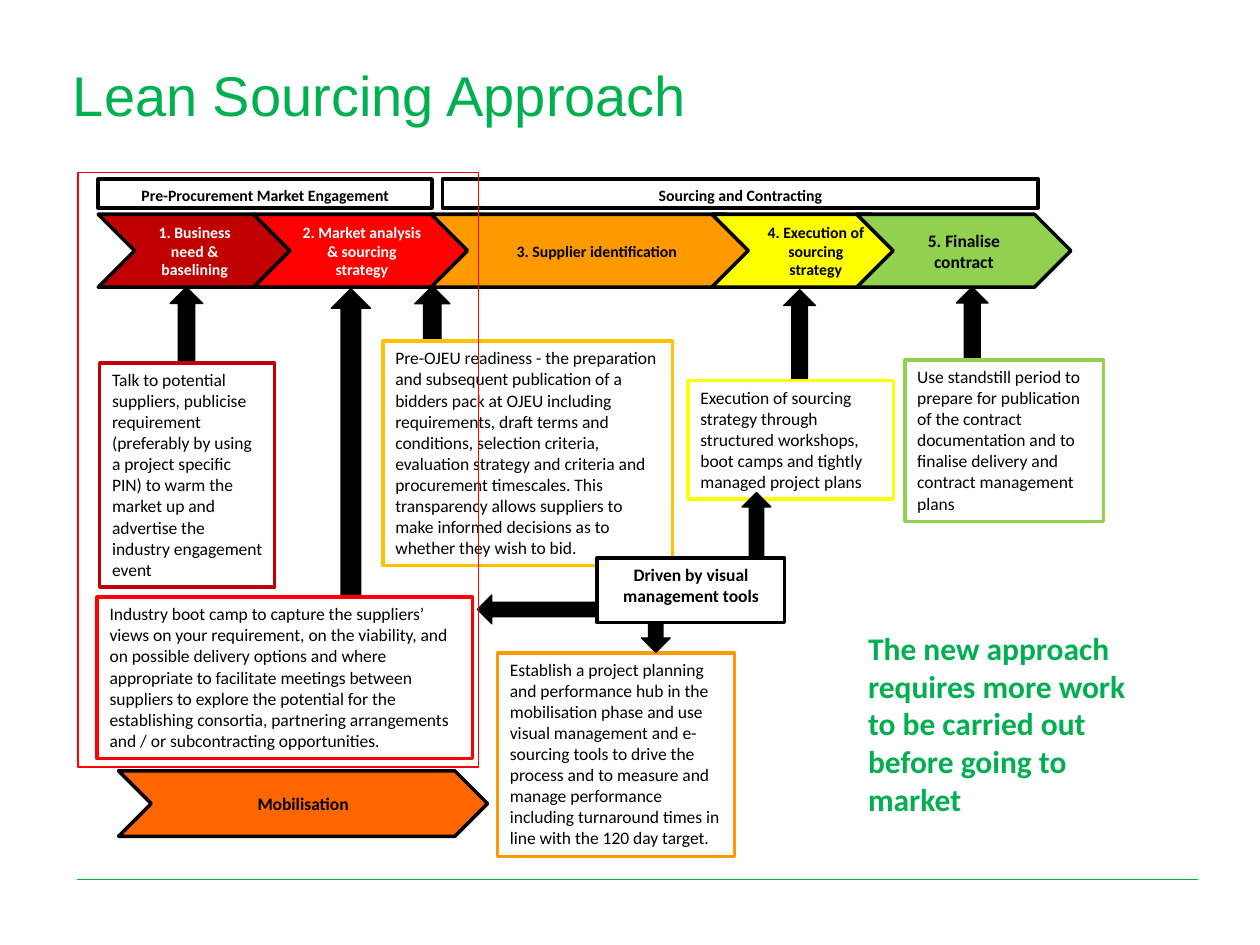
from dataclasses import dataclass

from lxml.etree import SubElement
from pptx import Presentation
from pptx.dml.color import RGBColor
from pptx.enum.shapes import MSO_CONNECTOR, MSO_SHAPE as Preset
from pptx.enum.text import MSO_ANCHOR as Anchor, MSO_AUTO_SIZE as AutoSize, PP_ALIGN as Align
from pptx.oxml.ns import qn
from pptx.util import Cm, Pt


@dataclass(frozen=True)
class Theme:
    black: str = "000000"
    white: str = "FFFFFF"
    green: str = "00B050"
    rule: str = "00AF41"
    dark_red: str = "C00000"
    red: str = "FF0000"
    orange: str = "FF9900"
    deep_orange: str = "FF6600"
    gold: str = "FFC000"
    yellow: str = "FFFF00"
    lime: str = "92D050"
    body_font: str = "Calibri"
    title_font: str = "Arial"
    title: int = 32
    message: int = 18
    body: int = 10
    label: int = 9


theme = Theme()
prs = Presentation()
prs.slide_width, prs.slide_height = Cm(25.4), Cm(19.05)
slide = prs.slides.add_slide(prs.slide_layouts[6])


def write(shape, text, frame_format, size=theme.body, color=theme.black, bold=False,
          align=Align.LEFT, font=theme.body_font):
    frame = shape.text_frame
    for name, value in {"word_wrap": True, **frame_format}.items():
        setattr(frame, name, value)
    paragraph = frame.paragraphs[0]
    paragraph.alignment = align
    run = paragraph.add_run()
    run.text = text
    for name, value in {"name": font, "size": Pt(size), "bold": bold}.items():
        setattr(run.font, name, value)
    run.font.color.rgb = RGBColor.from_string(color)
    return paragraph


def add_block(preset, box, fill=None, line=theme.black, weight=2):
    block = slide.shapes.add_shape(preset, *map(Cm, box))
    block.shadow.inherit = False
    if fill:
        block.fill.solid()
        block.fill.fore_color.rgb = RGBColor.from_string(fill)
    else:
        block.fill.background()
    block.line.color.rgb = RGBColor.from_string(line)
    block.line.width = Pt(weight)
    return block


# Footer rule
footer = slide.shapes.add_connector(MSO_CONNECTOR.STRAIGHT, Cm(1.55), Cm(17.73), Cm(24.16), Cm(17.73))
footer.line.color.rgb = RGBColor.from_string(theme.rule)
footer.line.width = Pt(0.5)
SubElement(footer._element.spPr, qn("a:effectLst"))

# Process stages
stage_top, stage_height = 4.32, 1.47
stages = [
    ((1.98, stage_top, 3.89, stage_height), "1. Business need & baselining",
     theme.dark_red, theme.white, theme.label, 0.25),
    ((5.11, stage_top, 4.37, stage_height), "2. Market analysis & sourcing strategy",
     theme.red, theme.white, theme.label, 0.25),
    ((8.69, stage_top, 6.68, stage_height), "3. Supplier identification",
     theme.orange, theme.black, theme.label, 0.25),
    ((14.35, stage_top, 3.94, stage_height), "4. Execution of sourcing strategy",
     theme.yellow, theme.black, theme.label, 0),
    ((17.27, stage_top, 4.32, stage_height), "5. Finalise contract",
     theme.lime, theme.black, theme.body, 0.25),
    ((2.39, 15.54, 7.44, 1.32), "Mobilisation",
     theme.deep_orange, theme.black, theme.body, 0.25),
]
for box, text, fill, color, size, right_margin in stages:
    stage = add_block(Preset.CHEVRON, box, fill)
    write(stage, text, {"vertical_anchor": Anchor.MIDDLE, "margin_right": Cm(right_margin)},
          size, color, True, Align.CENTER)

# Phase headings
for left, width, text in [(1.98, 6.73, "Pre-Procurement Market Engagement"),
                          (8.92, 12.01, "Sourcing and Contracting")]:
    phase = add_block(Preset.RECTANGLE, (left, 3.61, width, 0.58))
    write(phase, text, {"vertical_anchor": Anchor.TOP}, theme.label, bold=True, align=Align.CENTER)

# Arrows from the notes up to the stages
stage_arrows = [
    (15.8, 5.84, 0.64, 1.83),
    (6.68, 5.82, 0.79, 6.2),
    (8.36, 5.77, 0.71, 1.07),
    (3.43, 5.79, 0.66, 1.52),
    (19.28, 5.79, 0.64, 1.47),
]
for box in stage_arrows:
    add_block(Preset.UP_ARROW, box, theme.black, weight=0.75)

# Notes
note_format = {"vertical_anchor": Anchor.TOP, "auto_size": AutoSize.SHAPE_TO_FIT_TEXT}
notes = [
    ((2.01, 7.32, 3.53, 4.52), theme.dark_red,
     "Talk to potential suppliers, publicise requirement (preferably by using a project specific "
     "PIN) to warm the market up and advertise the industry engagement event"),
    ((10.03, 13.16, 4.78, 4.11), theme.orange,
     "Establish a project planning and performance hub in the mobilisation phase and use visual "
     "management and e-sourcing tools to drive the process and to measure and manage performance "
     "including turnaround times in line with the 120 day target."),
    ((1.96, 12.04, 7.57, 3.25), theme.red,
     "Industry boot camp to capture the suppliers’ views on your requirement, on the viability, "
     "and on possible delivery options and where appropriate to facilitate meetings between "
     "suppliers to explore the potential for the establishing consortia, partnering arrangements "
     "and / or subcontracting opportunities."),
    ((13.87, 7.67, 4.14, 2.39), theme.yellow,
     "Execution of sourcing strategy through structured workshops, boot camps and tightly "
     "managed project plans"),
    ((18.24, 7.26, 4.01, 3.25), theme.lime,
     "Use standstill period to prepare for publication of the contract documentation and to "
     "finalise delivery and contract management plans"),
    ((7.72, 6.88, 5.84, 4.52), theme.gold,
     "Pre-OJEU readiness - the preparation and subsequent publication of a bidders pack at OJEU "
     "including requirements, draft terms and conditions, selection criteria, evaluation strategy "
     "and criteria and procurement timescales. This transparency allows suppliers to make "
     "informed decisions as to whether they wish to bid."),
]
for box, line, text in notes:
    write(add_block(Preset.RECTANGLE, box, line=line), text, note_format)

# Visual management tools and the arrows leaving them
for box, rotation in [((14.96, 9.93, 0.58, 1.42), 0),
                      ((11.1, 10.52, 0.58, 3.53), 270),
                      ((12.93, 11.73, 0.58, 1.42), 180)]:
    add_block(Preset.UP_ARROW, box, theme.black, weight=0.75).rotation = rotation
tools = add_block(Preset.RECTANGLE, (12.04, 11.25, 3.78, 1.3), theme.white)
write(tools, "Driven by visual management tools", note_format, bold=True, align=Align.CENTER)

# Key message
message = slide.shapes.add_textbox(Cm(17.25), Cm(12.55), Cm(6.35), Cm(4.32))
write(message, "The new approach requires more work to be carried out before going to market",
      {"vertical_anchor": Anchor.TOP}, theme.message, theme.green, True)

# Frame around the pre-procurement work
add_block(Preset.RECTANGLE, (1.57, 3.48, 8.08, 11.99), line=theme.red, weight=1)

# Title
title = slide.shapes.add_textbox(Cm(1.22), Cm(1.3), Cm(22.96), Cm(1.35))
heading = write(title, "Lean Sourcing Approach", {"vertical_anchor": Anchor.MIDDLE},
                theme.title, theme.green, font=theme.title_font)
heading.line_spacing = 0.9

prs.save("out.pptx")
